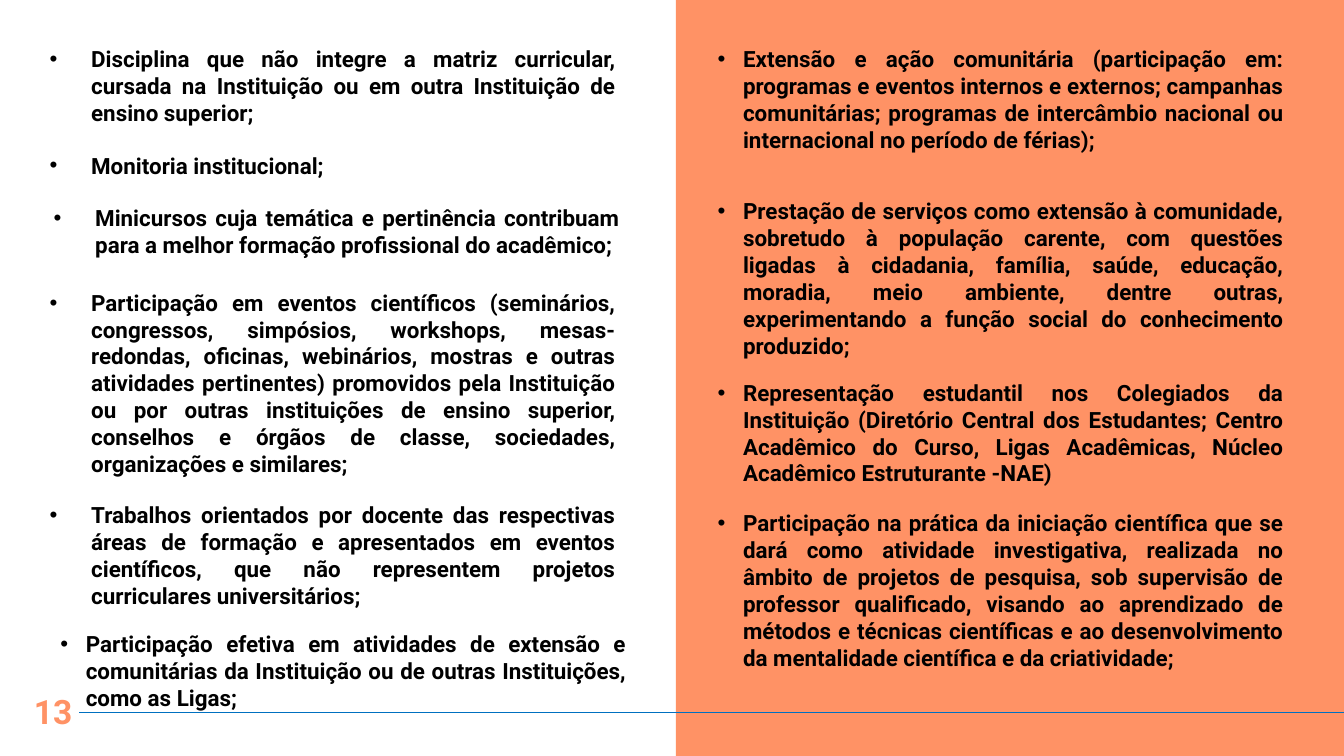
from lxml.etree import SubElement
from pptx import Presentation
from pptx.dml.color import RGBColor
from pptx.enum.shapes import MSO_CONNECTOR as Conn, MSO_SHAPE as Shape
from pptx.enum.text import MSO_AUTO_SIZE as Fit, PP_ALIGN as Align
from pptx.oxml.ns import qn
from pptx.util import Inches, Pt

WIDE = 10
HIGH = WIDE * 9 / 16
ORANGE, BLUE, BLACK = "FF9265", "0070C0", "000000"
BOX_W = 4.41

# Each item: left offset, top, height, indent, text
LEFT = [
    (0, 0.29, 0.91, 0.31, "Disciplina que não integre a matriz curricular, cursada na "
     "Instituição ou em outra Instituição de ensino superior;"),
    (0, 1.08, 0.3, 0.31, "Monitoria institucional;"),
    (0.03, 1.47, 0.5, 0.31, "Minicursos cuja temática e pertinência contribuam para a "
     "melhor formação profissional do acadêmico;"),
    (0, 2.1, 1.52, 0.31, "Participação em eventos científicos (seminários, congressos, "
     "simpósios, workshops, mesas-redondas, oficinas, webinários, mostras e outras "
     "atividades pertinentes) promovidos pela Instituição ou por outras instituições de "
     "ensino superior, conselhos e órgãos de classe, sociedades, organizações e similares;"),
    (0, 3.68, 0.91, 0.31, "Trabalhos orientados por docente das respectivas áreas de "
     "formação e apresentados em eventos científicos, que não representem projetos "
     "curriculares universitários;"),
    (0.08, 4.64, 0.71, 0.19, "Participação efetiva em atividades de extensão e "
     "comunitárias da Instituição ou de outras Instituições, como as Ligas;"),
]
RIGHT = [
    (0, 0.29, 0.91, 0.19, "Extensão e ação comunitária (participação em: programas e "
     "eventos internos e externos; campanhas comunitárias; programas de intercâmbio "
     "nacional ou internacional no período de férias);"),
    (0, 1.42, 1.31, 0.19, "Prestação de serviços como extensão à comunidade, sobretudo à "
     "população carente, com questões ligadas à cidadania, família, saúde, educação, "
     "moradia, meio ambiente, dentre outras, experimentando a função social do "
     "conhecimento produzido;"),
    (0, 2.77, 0.91, 0.19, "Representação estudantil nos Colegiados da Instituição "
     "(Diretório Central dos Estudantes; Centro Acadêmico do Curso, Ligas Acadêmicas, "
     "Núcleo Acadêmico Estruturante -NAE)"),
    (0, 3.74, 1.31, 0.19, "Participação na prática da iniciação científica que se dará "
     "como atividade investigativa, realizada no âmbito de projetos de pesquisa, sob "
     "supervisão de professor qualificado, visando ao aprendizado de métodos e técnicas "
     "científicas e ao desenvolvimento da mentalidade científica e da criatividade;"),
]


def color(code):
    return RGBColor.from_string(code)


def add_text(slide, box, text, size, code, align):
    """Add a bold text box and return its paragraph."""
    frame = slide.shapes.add_textbox(*map(Inches, box)).text_frame
    frame.word_wrap = True
    frame.auto_size = Fit.SHAPE_TO_FIT_TEXT
    par = frame.paragraphs[0]
    par.text = text
    par.alignment = align
    font = par.font
    font.name, font.size, font.bold = "Roboto", Pt(size), True
    font.color.rgb = color(code)
    return par


def add_bullet(par, indent):
    props = par._p.get_or_add_pPr()
    props.set("marL", str(Inches(indent)))
    props.set("indent", str(-Inches(indent)))
    tint = SubElement(props, qn("a:buClr"))
    SubElement(tint, qn("a:srgbClr"), val=BLACK)
    face = SubElement(props, qn("a:buFont"), typeface="Arial")
    mark = SubElement(props, qn("a:buChar"), char="•")
    for spot, node in enumerate((tint, face, mark)):
        props.insert(spot, node)  # bullets come before the font defaults


def add_column(slide, left, items):
    for shift, top, height, indent, text in items:
        box = left + shift, top, BOX_W, height
        par = add_text(slide, box, text, 12, BLACK, Align.JUSTIFY)
        add_bullet(par, indent)


def add_panel(slide, left, top, width, height):
    panel = slide.shapes.add_shape(
        Shape.RECTANGLE, *map(Inches, (left, top, width, height)))
    panel.shadow.inherit = False
    panel.fill.solid()
    panel.fill.fore_color.rgb = color(ORANGE)
    panel.line.fill.background()


def add_footer(slide, left, top, number):
    """Add the page number and the rule that runs to the slide's edge."""
    y = Inches(top + 0.21)
    rule = slide.shapes.add_connector(
        Conn.STRAIGHT, Inches(left + 0.63), y, Inches(WIDE), y)
    rule.line.color.rgb = color(BLUE)
    rule.line.width = Pt(0.75)
    SubElement(rule._element.spPr, qn("a:effectLst"))
    add_text(slide, (left, top, 0.87, 0.4), number, 18, ORANGE, Align.CENTER)


def main():
    deck = Presentation()
    deck.slide_width, deck.slide_height = Inches(WIDE), Inches(HIGH)
    slide = deck.slides.add_slide(deck.slide_layouts[6])
    add_panel(slide, 5.03, 0, WIDE - 5.03, HIGH)
    add_footer(slide, -0.04, 5.09, "13")
    add_column(slide, 0.27, LEFT)
    add_column(slide, 5.24, RIGHT)
    deck.save("out.pptx")


if __name__ == "__main__":
    main()
